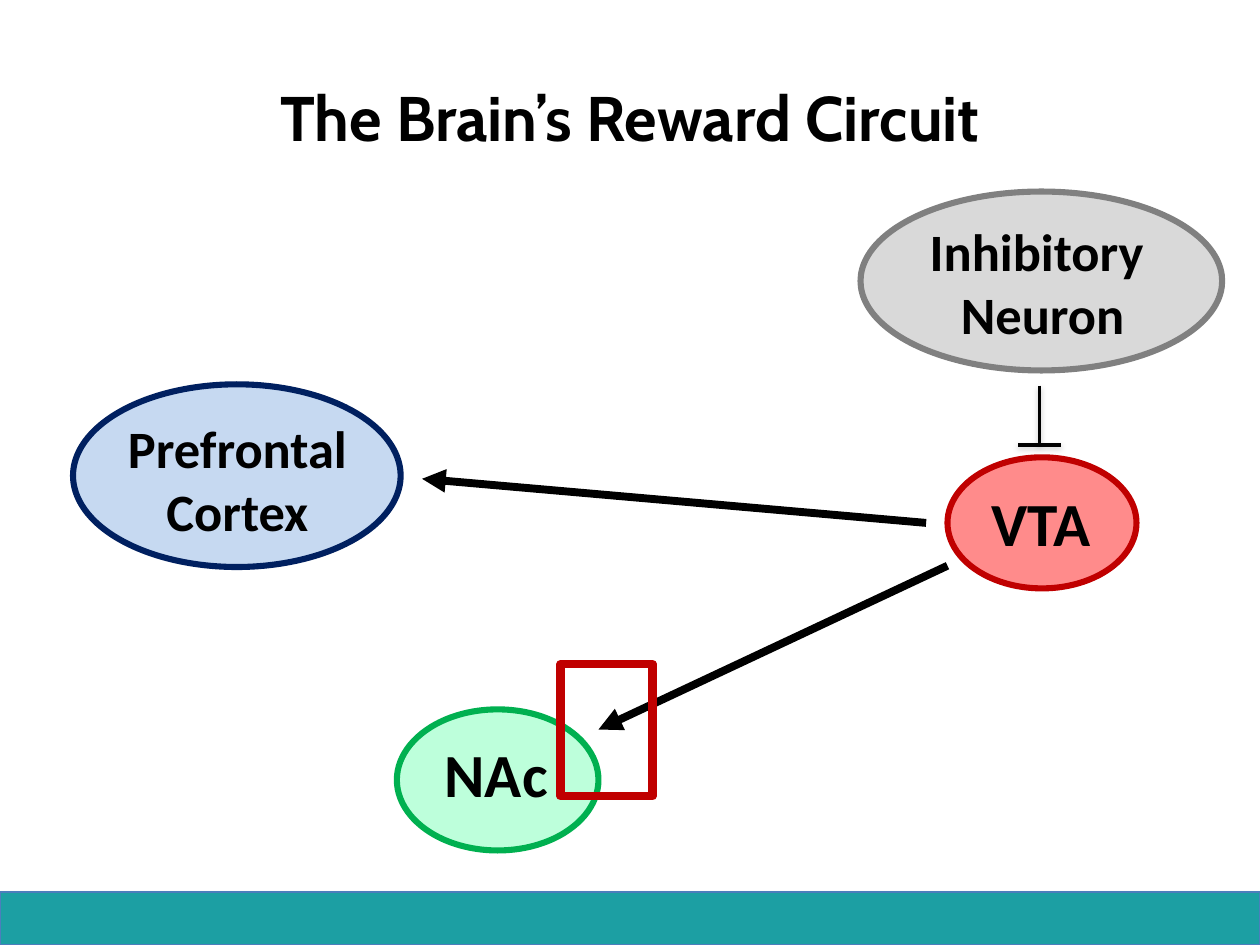
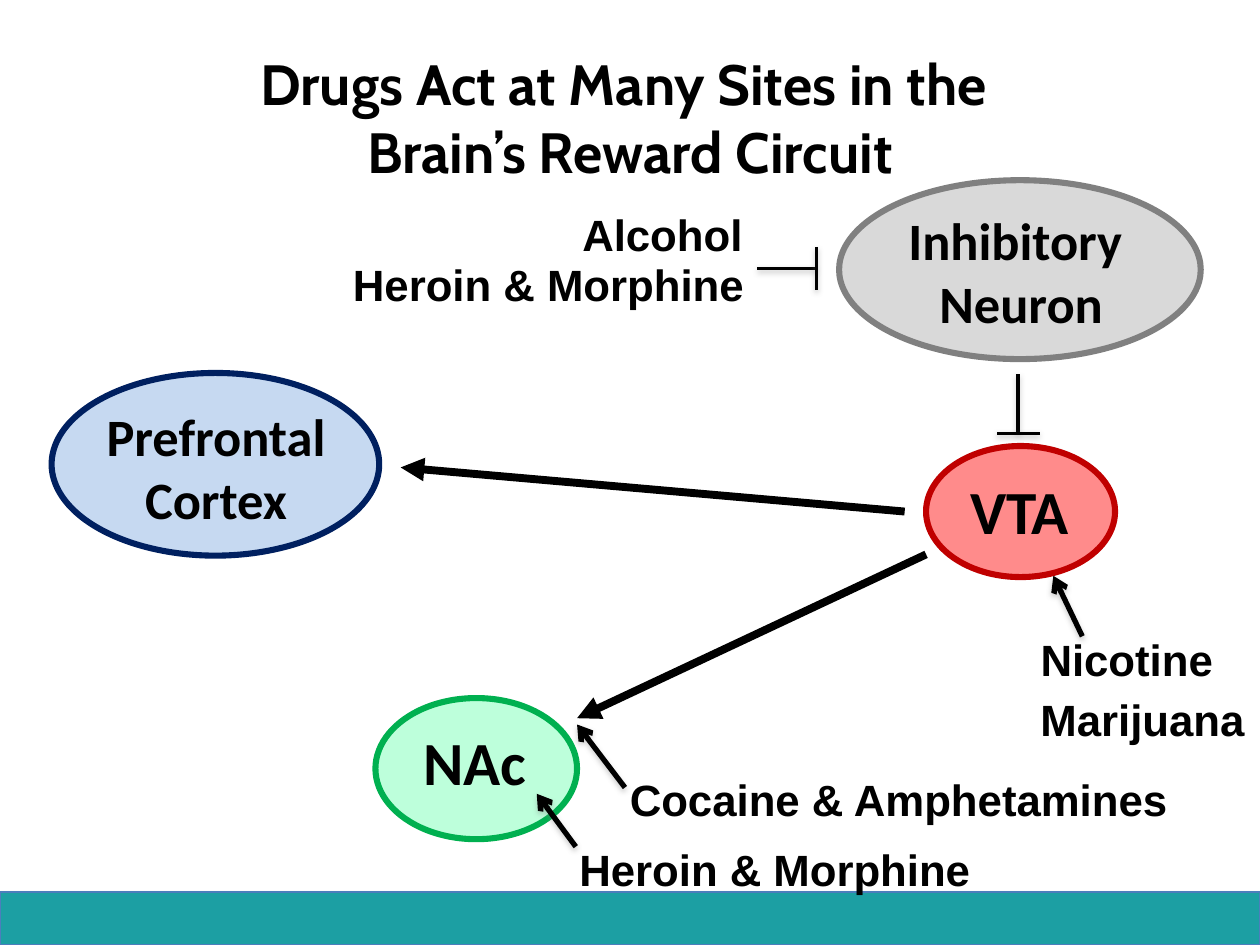
from lxml.etree import SubElement
from pptx import Presentation
from pptx.dml.color import RGBColor
from pptx.enum.shapes import MSO_CONNECTOR, MSO_SHAPE
from pptx.enum.text import MSO_ANCHOR, PP_ALIGN
from pptx.oxml.ns import qn
from pptx.util import Inches, Pt

BLACK = "000000"
TEAL, BAND_EDGE = "1C9FA3", "4B7EBC"
HIGHLIGHT = "C00000"
TITLE_FONT, REGION_FONT, DRUG_FONT = "Cabin", "Calibri", "Arial"
LEFT, CENTER, RIGHT = PP_ALIGN.LEFT, PP_ALIGN.CENTER, PP_ALIGN.RIGHT

BAND_BOX = (0, 7.08, 10, 0.42)
TITLE_BOX = (0.5, 0.3, 9, 1.25)
HIGHLIGHT_BOX = (4.45, 5.27, 0.73, 1.05)
BAR_HALF = 0.17

# The circuit, in first-slide coordinates:
# ellipse box, fill, outline, label box, label lines, size, alignment
REGIONS = [
    ((7.52, 3.63, 1.5, 1.04), "FF8B8B", "C00000",
     (7.77, 3.8, 1.75, 0.69), ["VTA"], 35, LEFT),
    ((3.15, 5.63, 1.6, 1.12), "BDFFDB", "00B050",
     (3.43, 5.79, 1.75, 0.69), ["NAc"], 35, LEFT),
    ((0.58, 3.05, 2.6, 1.45), "C6D9F1", "002060",
     (0.5, 3.25, 2.77, 1.11), ["Prefrontal Cortex"], 30, CENTER),
    ((6.83, 1.52, 2.87, 1.42), "D9D9D9", "808080",
     (6.89, 1.69, 2.77, 1.11), ["Inhibitory ", "Neuron"], 30, CENTER),
]
PATHWAYS = [((7.35, 4.15), (3.35, 3.8)), ((7.52, 4.49), (4.75, 5.79))]
NEURON_INHIBITS_VTA = ((8.25, 3.06), (8.25, 3.53))

# Drugs on the second slide: name, box, alignment
DRUGS = [
    ("Cocaine & Amphetamines", (4.9, 6.08, 4.51, 0.52), LEFT),
    ("Nicotine", (8.16, 4.97, 1.59, 0.52), LEFT),
    ("Marijuana", (8.16, 5.45, 1.84, 0.52), LEFT),
    ("Heroin & Morphine", (4.5, 6.64, 3.34, 0.52), LEFT),
    ("Alcohol", (1.87, 1.6, 4.12, 0.52), RIGHT),
    ("Heroin & Morphine", (1.88, 2, 4.12, 0.52), RIGHT),
]
DRUG_ARROWS = [
    ((4.96, 6.25), (4.58, 5.75)),
    ((8.59, 5.05), (8.36, 4.57)),
    ((4.57, 6.72), (4.26, 6.3)),
]
DRUGS_INHIBIT_NEURON = ((6.01, 2.13), (6.48, 2.13))


def color(hex_string):
    return RGBColor.from_string(hex_string)


def inches(values):
    return [Inches(value) for value in values]


def moved(values, shift):
    """Shift a point, or the left and top of a box."""
    return (values[0] + shift[0], values[1] + shift[1], *values[2:])


def set_shadow(shape, shadow=None):
    """Give a downward shadow (colour, percent, distance), or none at all."""
    effects = SubElement(shape.element.spPr, qn("a:effectLst"))
    if shadow:
        shade, percent, distance = shadow
        outer = SubElement(effects, qn("a:outerShdw"), blurRad=str(Pt(3.1)),
                           dist=str(Pt(distance)), dir="5400000", rotWithShape="0")
        rgb = SubElement(outer, qn("a:srgbClr"), val=shade)
        SubElement(rgb, qn("a:alpha"), val=str(percent * 1000))


def add_outlined(slide, preset, box, fill, outline, width, shadow=None):
    shape = slide.shapes.add_shape(preset, *inches(box))
    if fill:
        shape.fill.solid()
        shape.fill.fore_color.rgb = color(fill)
    else:
        shape.fill.background()
    shape.line.color.rgb = color(outline)
    shape.line.width = Pt(width)
    set_shadow(shape, shadow)
    return shape


def add_line(shapes, start, end, width, arrowhead=None, shadow=None):
    line = shapes.add_connector(MSO_CONNECTOR.STRAIGHT, *inches(start + end))
    line.line.color.rgb = color(BLACK)
    line.line.width = Pt(width)
    if arrowhead:
        SubElement(line.element.spPr.find(qn("a:ln")), qn("a:tailEnd"), type=arrowhead)
    set_shadow(line, shadow)


def style(paragraph, font_name, size, alignment):
    paragraph.alignment = alignment
    paragraph.font.name = font_name
    paragraph.font.size = Pt(size)
    paragraph.font.bold = True
    paragraph.font.color.rgb = color(BLACK)


def add_label(slide, box, lines, font_name, size, alignment, wrap=True):
    frame = slide.shapes.add_textbox(*inches(box)).text_frame
    frame.word_wrap = wrap
    frame.text = "\n".join(lines)
    for paragraph in frame.paragraphs:
        style(paragraph, font_name, size, alignment)


LINE_SHADOW = ("808080", 38, 1.6)


def add_inhibition(slide, start, end):
    """Draw a stem that ends in a crossbar."""
    x, y = end
    if start[0] == x:
        bar = ((x + BAR_HALF, y), (x - BAR_HALF, y))
    else:
        bar = ((x, y - BAR_HALF), (x, y + BAR_HALF))
    group = slide.shapes.add_group_shape()
    for line_start, line_end in ((start, end), bar):
        add_line(group.shapes, line_start, line_end, 2, shadow=LINE_SHADOW)


def add_circuit(slide, shift=(0, 0)):
    for box, fill, outline, label_box, lines, size, alignment in REGIONS:
        add_outlined(slide, MSO_SHAPE.OVAL, moved(box, shift), fill, outline, 3.5)
        add_label(slide, moved(label_box, shift), lines, REGION_FONT, size, alignment)
    for start, end in PATHWAYS:
        add_line(slide.shapes, moved(start, shift), moved(end, shift), 4.5, "triangle")
    add_inhibition(slide, *(moved(point, shift) for point in NEURON_INHIBITS_VTA))


def add_titled_slide(presentation, layout, title, size):
    slide = presentation.slides.add_slide(layout)
    placeholder = slide.shapes.title
    placeholder.left, placeholder.top, placeholder.width, placeholder.height = inches(TITLE_BOX)
    frame = placeholder.text_frame
    frame.text = title
    frame.vertical_anchor = MSO_ANCHOR.MIDDLE
    style(frame.paragraphs[0], TITLE_FONT, size, CENTER)
    return slide


def add_band_to_layout(slide):
    """Draw the bottom band, then hand it to the layout that all slides share."""
    band = add_outlined(slide, MSO_SHAPE.RECTANGLE, BAND_BOX, TEAL, BAND_EDGE, 0.75,
                        (BLACK, 35, 1.8))
    slide.slide_layout.shapes.element.append(band.element)


def main():
    presentation = Presentation()
    presentation.slide_width, presentation.slide_height = Inches(10), Inches(7.5)
    title_only = presentation.slide_layouts[5]

    circuit_slide = add_titled_slide(
        presentation, title_only, "The Brain’s Reward Circuit", 36)
    add_band_to_layout(circuit_slide)
    add_circuit(circuit_slide)
    add_outlined(circuit_slide, MSO_SHAPE.RECTANGLE, HIGHLIGHT_BOX, None, HIGHLIGHT, 4.75)

    drugs_slide = add_titled_slide(
        presentation, title_only,
        "Drugs Act at Many Sites in the \vBrain’s Reward Circuit", 32.4)
    add_circuit(drugs_slide, shift=(-0.17, -0.09))
    for name, box, alignment in DRUGS:
        add_label(drugs_slide, box, [name], DRUG_FONT, 25, alignment, wrap=alignment == RIGHT)
    for start, end in DRUG_ARROWS:
        add_line(drugs_slide.shapes, start, end, 3, "arrow", LINE_SHADOW)
    add_inhibition(drugs_slide, *DRUGS_INHIBIT_NEURON)

    presentation.save("out.pptx")


if __name__ == "__main__":
    main()
